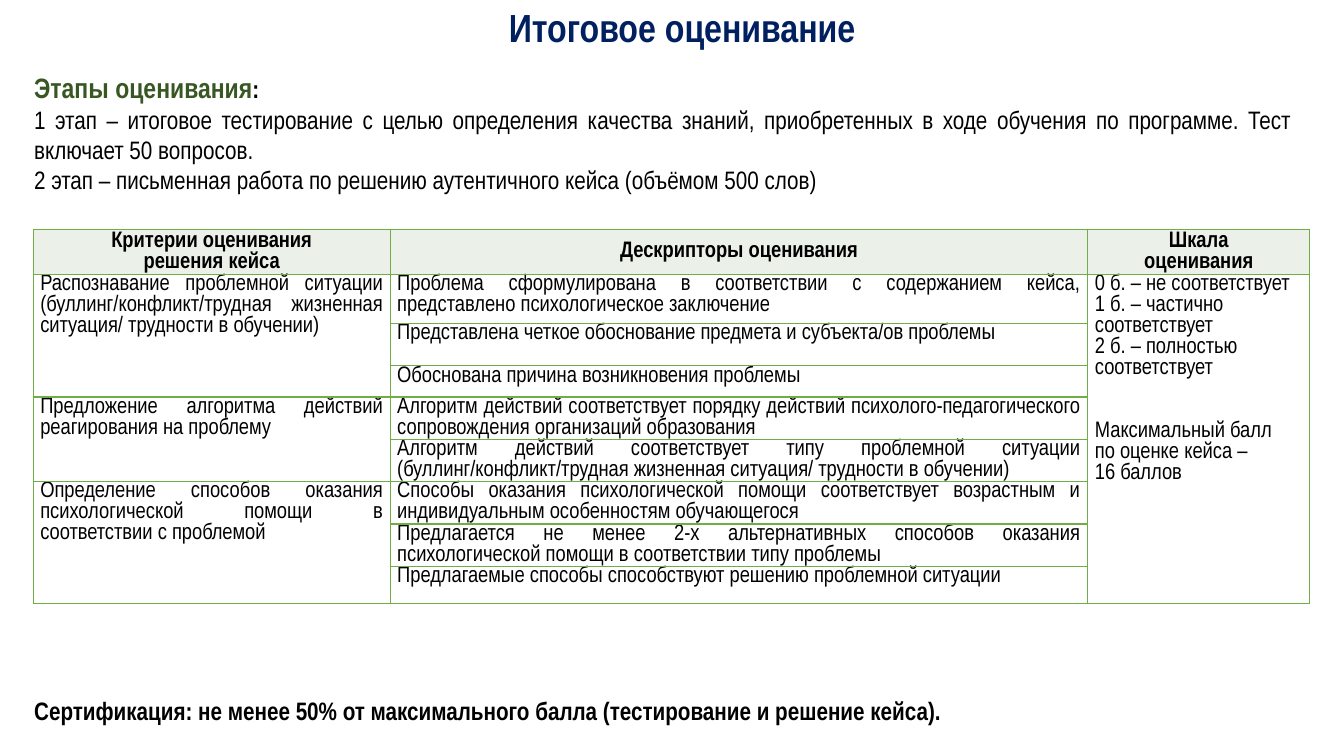
from lxml.etree import SubElement
from pptx import Presentation
from pptx.dml.color import RGBColor
from pptx.enum.text import MSO_ANCHOR, PP_ALIGN
from pptx.oxml.ns import qn
from pptx.util import Inches, Pt

FONT = "Arial Narrow"
BLACK, NAVY, GREEN = "000000", "002060", "385723"
BORDER, HEADER_FILL, BODY_FILL = "70AD47", "EBF1E9", "FFFFFF"
CENTER, LEFT, JUSTIFY = PP_ALIGN.CENTER, PP_ALIGN.LEFT, PP_ALIGN.JUSTIFY

TITLE = [(CENTER, [("Итоговое оценивание", 28, NAVY, True)])]
STAGES = [
    (JUSTIFY, [("Этапы оценивания", 20, GREEN, True), (":", 18, BLACK, True)]),
    (JUSTIFY, [("1 этап – итоговое тестирование с целью определения качества знаний, "
                "приобретенных в ходе обучения по программе. Тест включает 50 вопросов.",
                18, BLACK, False)]),
    (LEFT, [("2 этап – письменная работа по решению аутентичного кейса (объёмом 500 слов)",
             18, BLACK, False)]),
]
CERTIFICATION = [(LEFT, [("Сертификация: не менее 50% от максимального балла "
                          "(тестирование и решение кейса).", 18, BLACK, True)])]

HEADERS = [
    ["Критерии оценивания", "решения кейса"],
    ["Дескрипторы оценивания"],
    ["Шкала", "оценивания"],
]
CRITERIA = [
    ("Распознавание проблемной ситуации (буллинг/конфликт/трудная жизненная ситуация/ "
     "трудности в обучении)", [
         "Проблема сформулирована в соответствии с содержанием кейса, "
         "представлено психологическое заключение",
         "Представлена четкое обоснование предмета и субъекта/ов проблемы",
         "Обоснована причина возникновения проблемы"]),
    ("Предложение алгоритма действий реагирования на проблему", [
        "Алгоритм действий соответствует порядку действий психолого-педагогического "
        "сопровождения организаций образования",
        "Алгоритм действий соответствует типу проблемной ситуации "
        "(буллинг/конфликт/трудная жизненная ситуация/ трудности в обучении)"]),
    ("Определение способов оказания психологической помощи в соответствии с проблемой", [
        "Способы оказания психологической помощи соответствует возрастным и "
        "индивидуальным особенностям обучающегося",
        "Предлагается не менее 2-х альтернативных способов оказания "
        "психологической помощи в соответствии типу проблемы",
        "Предлагаемые способы способствуют решению проблемной ситуации"]),
]
SCALE = ["0 б. – не соответствует", "1 б. – частично соответствует",
         "2 б. – полностью соответствует"]
MAXIMUM = ["Максимальный балл", "по оценке кейса –", "16 баллов"]

COLUMN_WIDTHS = [3.54, 6.92, 2.2]
ROW_HEIGHTS = [0.44, 0.49, 0.42, 0.31, 0.42, 0.42, 0.42, 0.42, 0.37]
LINE_PITCH = 15
CELL_FORMAT = {"margin_left": Inches(0.07), "margin_right": Inches(0.07),
               "margin_top": 0, "margin_bottom": 0}


def color(value):
    return RGBColor.from_string(value)


def write(frame, paragraphs, **paragraph_format):
    for index, (alignment, runs) in enumerate(paragraphs):
        paragraph = frame.paragraphs[0] if index == 0 else frame.add_paragraph()
        for key, value in {"alignment": alignment, **paragraph_format}.items():
            setattr(paragraph, key, value)
        for text, size, ink, bold in runs:
            run = paragraph.add_run()
            run.text = text
            for key, value in {"name": FONT, "size": Pt(size), "bold": bold}.items():
                setattr(run.font, key, value)
            run.font.color.rgb = color(ink)


def add_text(slide, box, paragraphs, anchor=MSO_ANCHOR.TOP, **paragraph_format):
    frame = slide.shapes.add_textbox(*map(Inches, box)).text_frame
    frame.word_wrap = True
    frame.vertical_anchor = anchor
    write(frame, paragraphs, **paragraph_format)


def outline(cell):
    properties = cell._tc.get_or_add_tcPr()
    for index, side in enumerate(("a:lnL", "a:lnR", "a:lnT", "a:lnB")):
        line = SubElement(properties, qn(side), w=str(Pt(1)))
        fill = SubElement(line, qn("a:solidFill"))
        SubElement(fill, qn("a:srgbClr"), val=BORDER)
        properties.insert(index, line)


def fill_cell(cell, lines, alignment, bold=False):
    write(cell.text_frame, [(alignment, [(line, 16, BLACK, bold)]) for line in lines],
          line_spacing=Pt(LINE_PITCH))


def add_criteria_table(slide):
    table = slide.shapes.add_table(
        len(ROW_HEIGHTS), len(COLUMN_WIDTHS), Inches(0.33), Inches(2.28),
        Inches(sum(COLUMN_WIDTHS)), Inches(sum(ROW_HEIGHTS))).table
    table.first_row = table.horz_banding = False
    for column, width in zip(table.columns, COLUMN_WIDTHS):
        column.width = Inches(width)
    for number, (row, height) in enumerate(zip(table.rows, ROW_HEIGHTS)):
        row.height = Inches(height)
        for cell in row.cells:
            for key, value in CELL_FORMAT.items():
                setattr(cell, key, value)
            cell.vertical_anchor = MSO_ANCHOR.TOP if number else MSO_ANCHOR.MIDDLE
            cell.fill.solid()
            cell.fill.fore_color.rgb = color(BODY_FILL if number else HEADER_FILL)
            outline(cell)

    for column, header in enumerate(HEADERS):
        fill_cell(table.cell(0, column), header, CENTER, True)
    first = 1
    for criterion, descriptors in CRITERIA:
        last = first + len(descriptors) - 1
        table.cell(first, 0).merge(table.cell(last, 0))
        fill_cell(table.cell(first, 0), [criterion], JUSTIFY)
        for row, descriptor in enumerate(descriptors, first):
            fill_cell(table.cell(row, 1), [descriptor], JUSTIFY)
        first = last + 1
    scale = table.cell(1, 2)
    scale.merge(table.cell(first - 1, 2))
    fill_cell(scale, SCALE + MAXIMUM, LEFT)
    scale.text_frame.paragraphs[len(SCALE)].space_before = Pt(2 * LINE_PITCH)


def main():
    presentation = Presentation()
    presentation.slide_width = Inches(13.33)
    presentation.slide_height = Inches(7.5)
    slide = presentation.slides.add_slide(presentation.slide_layouts[6])
    add_text(slide, (0.1, 0.02, 13.33, 0.56), TITLE, MSO_ANCHOR.MIDDLE, line_spacing=0.9)
    add_criteria_table(slide)
    add_text(slide, (0.24, 6.85, 11.85, 0.4), CERTIFICATION)
    add_text(slide, (0.24, 0.65, 12.67, 1.35), STAGES)
    presentation.save("out.pptx")


if __name__ == "__main__":
    main()
